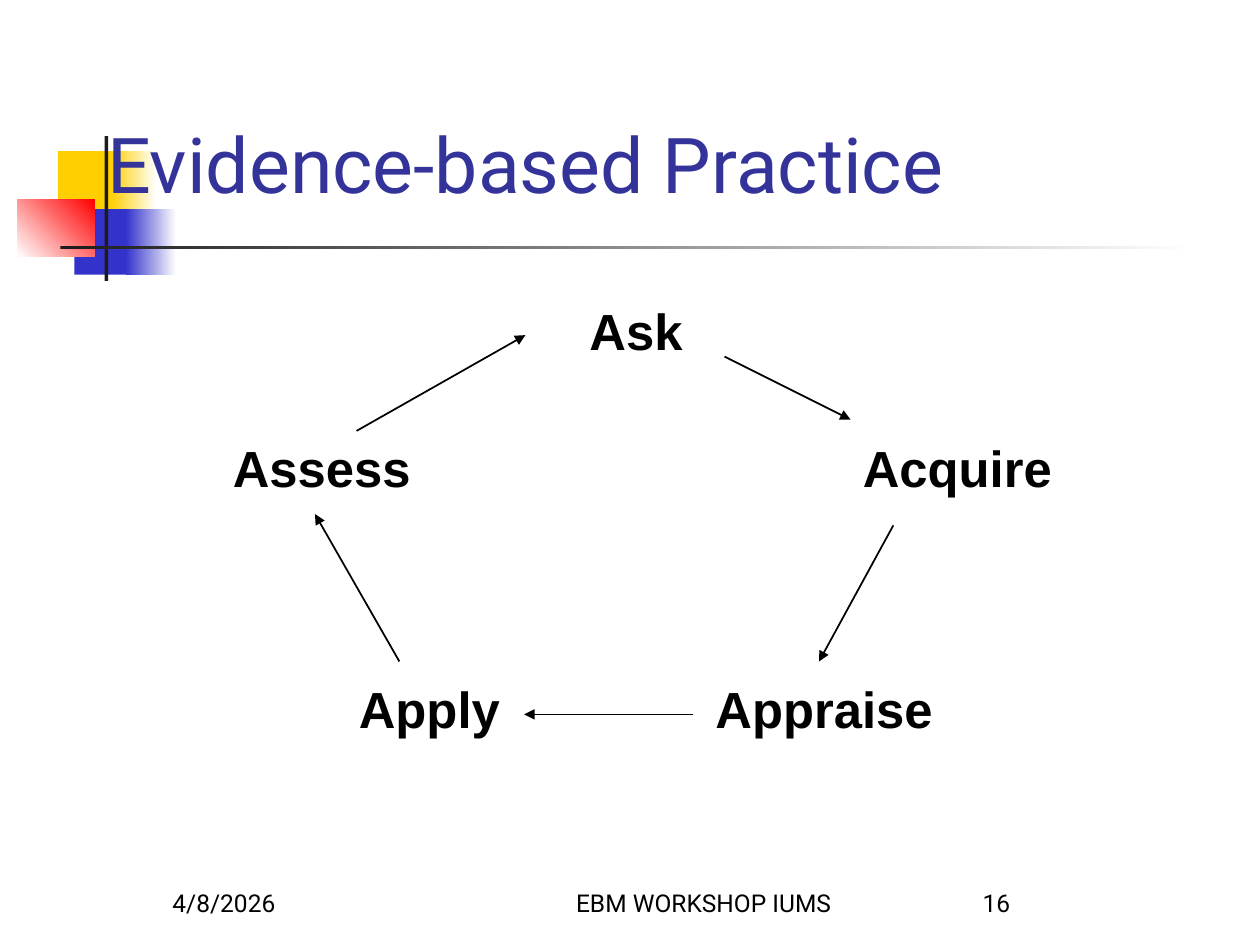
from pptx import Presentation
from pptx.dml.color import RGBColor
from pptx.enum.shapes import MSO_CONNECTOR, MSO_SHAPE
from pptx.enum.text import MSO_ANCHOR, PP_ALIGN
from pptx.oxml.ns import qn
from pptx.util import Inches, Pt
from lxml import etree

RECTANGLE = MSO_SHAPE.RECTANGLE
STRAIGHT = MSO_CONNECTOR.STRAIGHT
LEFT, CENTER = PP_ALIGN.LEFT, PP_ALIGN.CENTER
TOP, MIDDLE, BOTTOM = MSO_ANCHOR.TOP, MSO_ANCHOR.MIDDLE, MSO_ANCHOR.BOTTOM

BLACK = RGBColor(0x00, 0x00, 0x00)
WHITE = RGBColor(0xFF, 0xFF, 0xFF)
CHARCOAL = RGBColor(0x1C, 0x1C, 0x1C)
YELLOW = RGBColor(0xFF, 0xCF, 0x01)
BLUE = RGBColor(0x33, 0x33, 0xCC)
RED = RGBColor(0xFF, 0x00, 0x00)
INDIGO = RGBColor(0x33, 0x33, 0x99)

# left, top, width, height, colours (two make a gradient), gradient angle
DECORATION = [
    (0.46, 1.2, 0.48, 0.52, [YELLOW], 0),
    (0.88, 1.2, 0.36, 0.52, [YELLOW, WHITE], 0),
    (0.59, 1.66, 0.46, 0.52, [BLUE], 0),
    (1, 1.66, 0.4, 0.52, [BLUE, WHITE], 0),
    (0.14, 1.58, 0.61, 0.46, [WHITE, RED], 45),
    (0.83, 1.08, 0.03, 1.15, [CHARCOAL], 0),
    (0.48, 1.95, 9, 0.03, [CHARCOAL, WHITE], 0),
]
FOOTER = [
    ("4/8/2026", 1.27, 2.08, LEFT),
    ("EBM WORKSHOP IUMS", 4, 3.17, CENTER),
    ("16", 7.7, 2.08, LEFT),
]
# text, left, top, width, height
STEPS = [
    ("Ask", 4.58, 2.33, 1.83, 0.64),
    ("Acquire", 6.75, 3.42, 1.83, 1.17),
    ("Appraise", 5.58, 5.33, 2.1, 1.17),
    ("Apply", 2.75, 5.33, 1.83, 0.64),
    ("Assess", 1.75, 3.42, 1.83, 0.64),
]
ARROWS = [
    ((5.75, 2.83), (6.75, 3.33)),
    ((7.09, 4.17), (6.5, 5.25)),
    ((5.5, 5.67), (4.16, 5.67)),
    ((3.17, 5.25), (2.5, 4.08)),
    ((2.83, 3.42), (4.17, 2.66)),
]


def add_block(page, left, top, width, height, colours, angle):
    block = page.shapes.add_shape(
        RECTANGLE, Inches(left), Inches(top), Inches(width), Inches(height))
    block.shadow.inherit = False
    block.line.fill.background()
    if len(colours) == 1:
        block.fill.solid()
        block.fill.fore_color.rgb = colours[0]
        return
    block.fill.gradient()
    block.fill.gradient_angle = angle
    for stop, position, colour in zip(block.fill.gradient_stops, (0, 1), colours):
        stop.position = position
        stop.color.rgb = colour


def write_text(box, text, font_name, size, colour, bold=False, align=LEFT, anchor=TOP):
    frame = box.text_frame
    frame.text = text
    frame.word_wrap = True
    frame.vertical_anchor = anchor
    para = frame.paragraphs[0]
    para.alignment = align
    font = para.runs[0].font
    font.name = font_name
    font.size = Pt(size)
    font.bold = bold
    font.color.rgb = colour


def add_text(page, text, left, top, width, height, *style, **layout):
    box = page.shapes.add_textbox(
        Inches(left), Inches(top), Inches(width), Inches(height))
    write_text(box, text, *style, **layout)


def set_title(page, text):
    """Fill the title and bring it in front of the decoration."""
    title = page.shapes.title
    title.left, title.top = Inches(0.75), Inches(0.88)
    title.width, title.height = Inches(8.5), Inches(0.83)
    write_text(title, text, "Roboto", 44, INDIGO, anchor=MIDDLE)
    title.element.getparent().append(title.element)


def add_arrow(page, start, end):
    arrow = page.shapes.add_connector(
        STRAIGHT, *(Inches(value) for value in (*start, *end)))
    arrow.line.color.rgb = BLACK
    arrow.line.width = Pt(1)
    etree.SubElement(arrow.line._get_or_add_ln(), qn("a:tailEnd"), type="triangle")
    etree.SubElement(arrow.element.spPr, qn("a:effectLst"))


def main():
    deck = Presentation()
    deck.slide_width, deck.slide_height = Inches(10), Inches(7.5)
    page = deck.slides.add_slide(deck.slide_layouts[5])
    for block in DECORATION:
        add_block(page, *block)
    for text, left, width, align in FOOTER:
        add_text(page, text, left, 6.83, width, 0.5, "Roboto", 14, BLACK,
                 align=align, anchor=BOTTOM)
    set_title(page, "Evidence-based Practice")
    for step in STEPS:
        add_text(page, *step, "Arial", 29, BLACK, bold=True)
    for start, end in ARROWS:
        add_arrow(page, start, end)
    deck.save("out.pptx")


if __name__ == "__main__":
    main()
